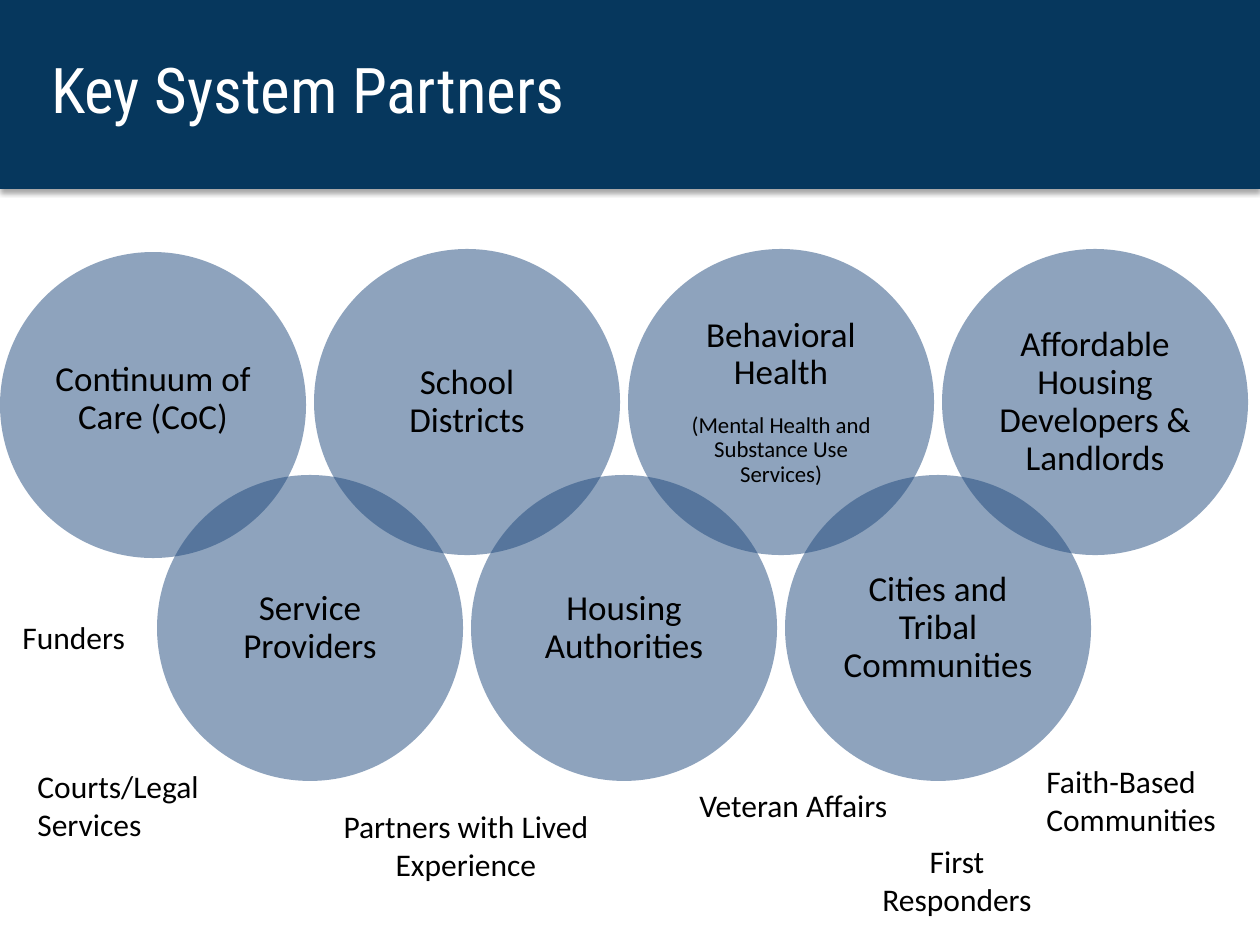
from lxml import etree
from pptx import Presentation
from pptx import util as u
from pptx.dml.color import RGBColor
from pptx.enum import shapes, text
from pptx.oxml.ns import qn

PX_PER_INCH = 126
COLOURS = {"navy": "06375D", "circle": "1F497D", "white": "FFFFFF", "black": "000000"}
BODY_FONT = "Calibri"
TITLE_FONT = "Roboto Condensed"
LEFT, CENTER = text.PP_ALIGN.LEFT, text.PP_ALIGN.CENTER

DIAMETER, STEP = 306, 157
UPPER_ROW, LOWER_ROW = 249, 475
PARTNERS = [
    ["Continuum of Care (CoC)"],
    ["Service Providers"],
    ["School Districts"],
    ["Housing Authorities"],
    ["Behavioral Health", "(Mental Health and Substance Use Services)"],
    ["Cities and Tribal Communities"],
    ["Affordable Housing Developers & Landlords"],
]
OTHER_PARTNERS = [
    ("Funders", 10, 612, 146, 50, LEFT),
    ("Faith-Based Communities", 1034, 756, 216, 89, LEFT),
    ("Partners with Lived Experience", 302, 801, 328, 89, CENTER),
    ("Veteran Affairs", 687, 780, 216, 50, LEFT),
    ("Courts/Legal Services", 25, 761, 194, 89, LEFT),
    ("First Responders", 859, 836, 196, 89, CENTER),
]


def px(length):
    return u.Emu(round(length * 914400 / PX_PER_INCH))


def colour(name):
    return RGBColor.from_string(COLOURS[name])


class SlideBuilder:
    def __init__(self, slide):
        self.slide = slide

    def shape(self, kind, fill, *bounds):
        shape = self.slide.shapes.add_shape(kind, *map(px, bounds))
        shape.shadow.inherit = False
        shape.fill.solid()
        shape.fill.fore_color.rgb = colour(fill)
        shape.line.fill.background()
        return shape

    def style(self, paragraph, size, ink="black", font=BODY_FONT, align=LEFT):
        paragraph.alignment = align
        paragraph.font.size = u.Pt(size)
        paragraph.font.name = font
        paragraph.font.color.rgb = colour(ink)

    def banner(self, *bounds):
        bar = self.shape(shapes.MSO_SHAPE.RECTANGLE, "navy", *bounds)
        effects = bar._element.spPr.find(qn("a:effectLst"))
        shadow = etree.SubElement(effects, qn("a:outerShdw"), blurRad=str(u.Pt(3.1)),
                                  dist=str(u.Pt(1.8)), dir="5400000", rotWithShape="0")
        tint = etree.SubElement(shadow, qn("a:srgbClr"), val=COLOURS["black"])
        etree.SubElement(tint, qn("a:alpha"), val="35000")

    def text_box(self, words, *bounds):
        box = self.slide.shapes.add_textbox(*map(px, bounds))
        frame = box.text_frame
        frame.word_wrap = True
        frame.text = words
        return frame

    def title(self, words, *bounds):
        frame = self.text_box(words, *bounds)
        frame.vertical_anchor = text.MSO_ANCHOR.MIDDLE
        self.style(frame.paragraphs[0], 36, "white", TITLE_FONT)

    def label(self, words, left, top, width, height, align):
        frame = self.text_box(words, left, top, width, height)
        frame.auto_size = text.MSO_AUTO_SIZE.SHAPE_TO_FIT_TEXT
        self.style(frame.paragraphs[0], 18, align=align)

    def circle(self, lines, left, top, bottom_inset=9):
        circle = self.shape(shapes.MSO_SHAPE.OVAL, "circle", left, top, DIAMETER, DIAMETER)
        tint = circle._element.spPr.find(qn("a:solidFill"))[0]
        etree.SubElement(tint, qn("a:alpha"), val="50000")
        frame = circle.text_frame
        frame.word_wrap = True
        frame.vertical_anchor = text.MSO_ANCHOR.MIDDLE
        frame.margin_left = frame.margin_right = frame.margin_top = px(9)
        frame.margin_bottom = px(bottom_inset)
        frame.text = "\n".join(lines)
        for paragraph, size in zip(frame.paragraphs, (20, 13)):
            self.style(paragraph, size, align=CENTER)
            paragraph.line_spacing = 0.9
        for paragraph in frame.paragraphs[:-1]:
            paragraph.space_after = u.Pt(12)


def main():
    deck = Presentation()
    deck.slide_width, deck.slide_height = px(1260), px(945)
    page = SlideBuilder(deck.slides.add_slide(deck.slide_layouts[6]))
    page.banner(0, 0, 1260, 189)
    page.title("Key System Partners", 39, 40, 906, 96)
    for index, lines in enumerate(PARTNERS):
        top = LOWER_ROW if index % 2 else UPPER_ROW
        if index == 0:
            page.circle(lines, 0, top + 3, bottom_inset=21)
        else:
            page.circle(lines, index * STEP, top)
    for partner in OTHER_PARTNERS:
        page.label(*partner)
    deck.save("out.pptx")


if __name__ == "__main__":
    main()
